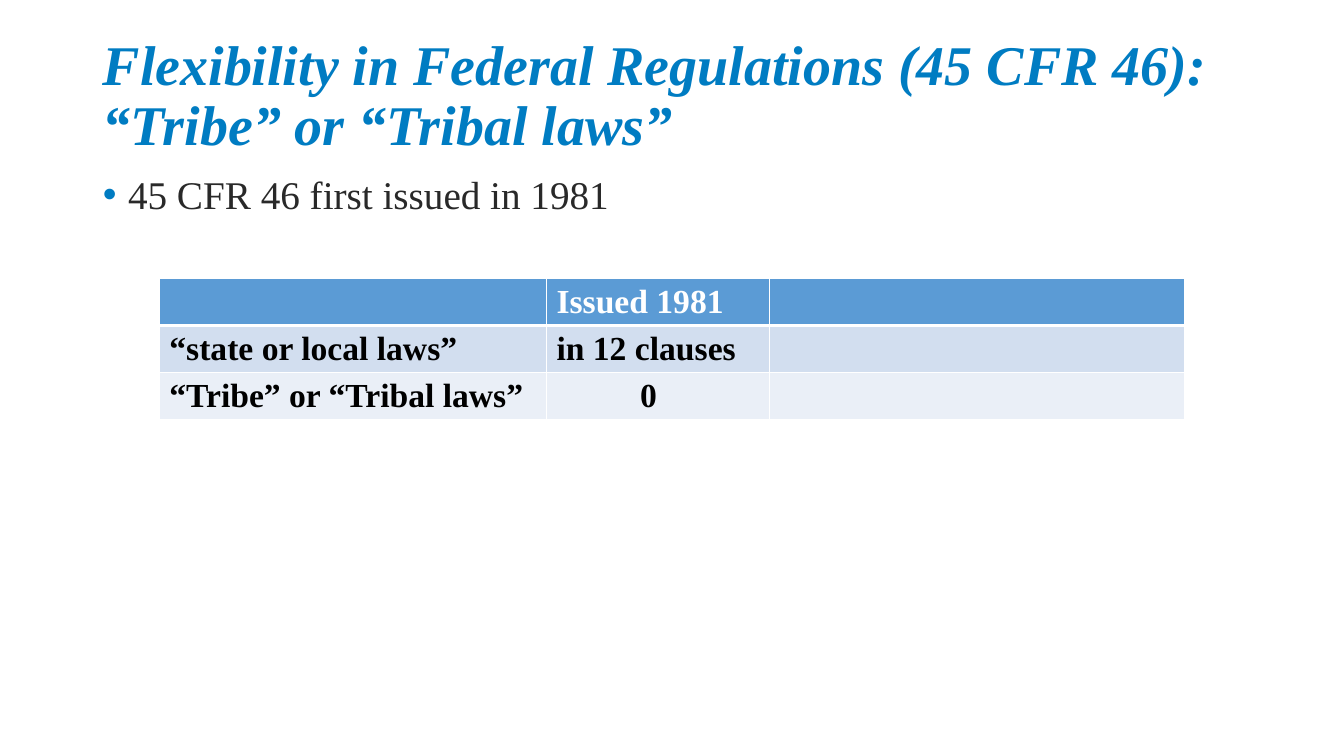
from lxml.etree import SubElement
from pptx import Presentation
from pptx.dml.color import RGBColor
from pptx.enum.text import MSO_ANCHOR as ANCHOR, MSO_AUTO_SIZE as AUTO, PP_ALIGN as ALIGN
from pptx.oxml.ns import qn
from pptx.util import Inches, Pt

COLORS = {
    "accent": "007CC2",
    "body": "292929",
    "black": "000000",
    "white": "FFFFFF",
    "header": "5B9BD5",
    "band1": "D2DEEF",
    "band2": "EAEFF7",
}
FONT = "Times New Roman"
TITLE = "Flexibility in Federal Regulations (45 CFR 46):\v“Tribe” or “Tribal laws”"
BULLET = "45 CFR 46 first issued in 1981"
COL_WIDTHS = [3.84, 2.21, 4.12]
ROW_HEIGHT = 0.46
ROWS = [
    ("header", "white", ["", "Issued 1981", ""]),
    ("band1", "black", ["“state or local laws”", "in 12 clauses", ""]),
    ("band2", "black", ["“Tribe” or “Tribal laws”", "0", ""]),
]


def rgb(name):
    return RGBColor.from_string(COLORS[name])


def set_attrs(obj, values):
    for name, value in values.items():
        setattr(obj, name, value)


def format_text(p, size, color, **styles):
    for r in p.runs:
        set_attrs(r.font, {"name": FONT, "size": Pt(size), **styles})
        r.font.color.rgb = rgb(color)


def fill_placeholder(sp, box, text, anchor):
    left, top, width, height = map(Inches, box)
    set_attrs(sp, {"left": left, "top": top, "width": width, "height": height})
    tf = sp.text_frame
    set_attrs(tf, {"word_wrap": True, "auto_size": AUTO.NONE, "vertical_anchor": anchor})
    p = tf.paragraphs[0]
    p.text = text
    set_attrs(p, {"alignment": ALIGN.LEFT, "line_spacing": 0.9})
    return p


def add_bullet(p, char, color):
    pPr = p._p.get_or_add_pPr()
    pPr.set("marL", str(Inches(0.25)))
    pPr.set("indent", str(-Inches(0.25)))
    SubElement(SubElement(pPr, qn("a:buClr")), qn("a:srgbClr"), val=COLORS[color])
    SubElement(pPr, qn("a:buFont"), typeface="Arial")
    SubElement(pPr, qn("a:buChar"), char=char)


def set_borders(cell, widths):
    tcPr = cell._tc.get_or_add_tcPr()
    for side, width in widths.items():
        ln = SubElement(tcPr, qn(f"a:ln{side}"), w=str(Pt(width)))
        SubElement(SubElement(ln, qn("a:solidFill")), qn("a:srgbClr"), val=COLORS["white"])


def fill_cell(cell, text, fill, color, borders):
    set_borders(cell, borders)
    cell.fill.solid()
    cell.fill.fore_color.rgb = rgb(fill)
    if text:
        p = cell.text_frame.paragraphs[0]
        p.text = text
        format_text(p, 24, color, bold=True)


def add_clause_table(slide):
    frame = slide.shapes.add_table(
        len(ROWS), len(COL_WIDTHS), Inches(1.58), Inches(2.76),
        Inches(sum(COL_WIDTHS)), Inches(ROW_HEIGHT * len(ROWS)))
    table = frame.table
    for col, width in zip(table.columns, COL_WIDTHS):
        col.width = Inches(width)
    for i, (fill, color, texts) in enumerate(ROWS):
        table.rows[i].height = Inches(ROW_HEIGHT)
        borders = {"L": 1, "R": 1, "T": 3 if i == 1 else 1, "B": 3 if i == 0 else 1}
        for j, text in enumerate(texts):
            fill_cell(table.cell(i, j), text, fill, color, borders)
    table.cell(2, 1).margin_left = Inches(0.93)


def main():
    prs = Presentation()
    set_attrs(prs, {"slide_width": Inches(13.33), "slide_height": Inches(7.5)})
    slide = prs.slides.add_slide(prs.slide_layouts[1])
    title, body = slide.placeholders

    p = fill_placeholder(title, (0.92, 0.24, 12.18, 1.45), TITLE, ANCHOR.MIDDLE)
    format_text(p, 40, "accent", bold=True, italic=True)

    p = fill_placeholder(body, (0.92, 1.69, 11.9, 5.59), BULLET, ANCHOR.TOP)
    p.space_before = Pt(10)
    format_text(p, 28, "body")
    add_bullet(p, "•", "accent")

    add_clause_table(slide)
    prs.save("out.pptx")


if __name__ == "__main__":
    main()
